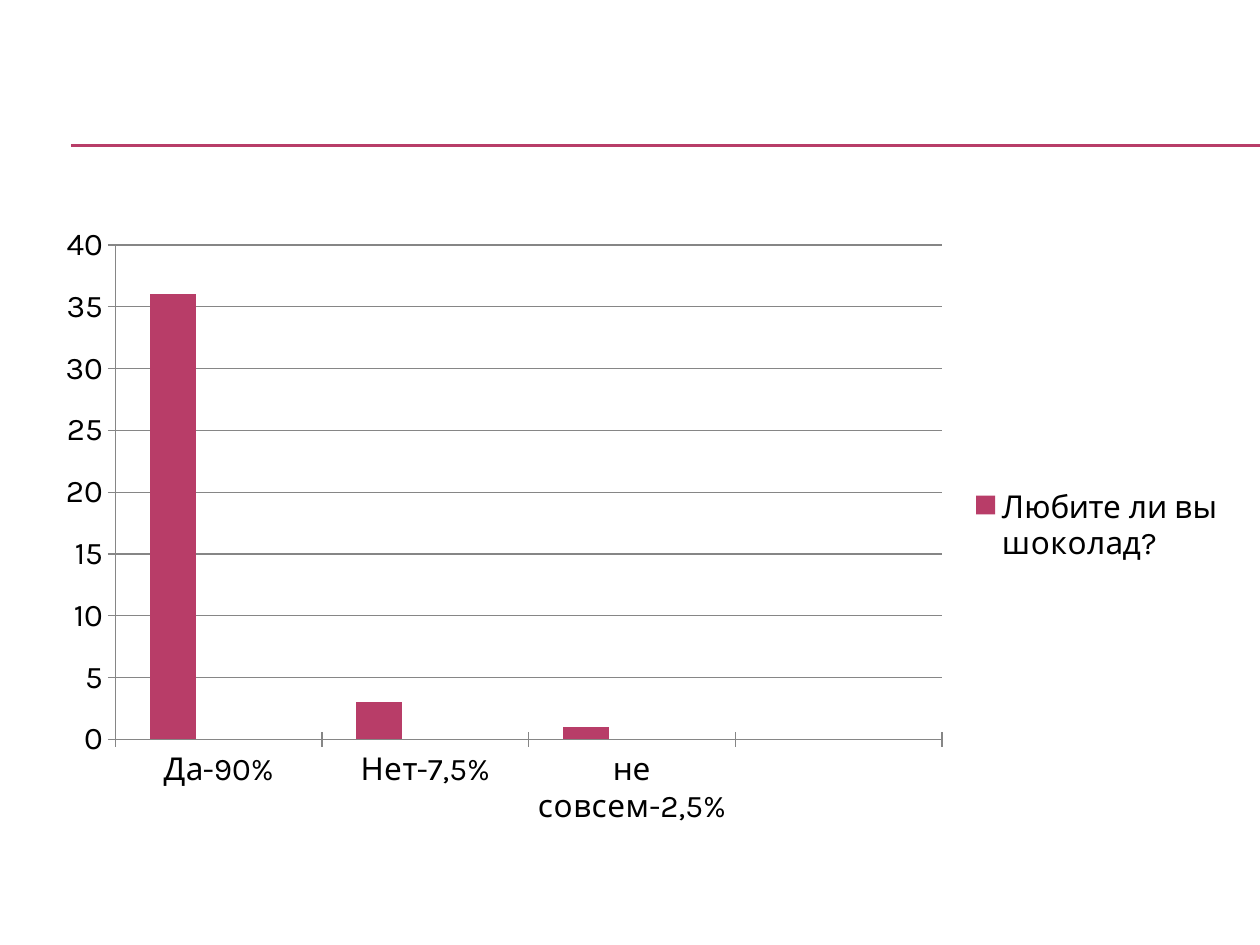
from lxml import etree
from pptx import Presentation
from pptx.chart.data import CategoryChartData
from pptx.dml.color import RGBColor
from pptx.enum.chart import XL_CHART_TYPE, XL_LEGEND_POSITION, XL_TICK_MARK
from pptx.enum.shapes import MSO_CONNECTOR
from pptx.oxml import parse_xml
from pptx.oxml.ns import nsdecls, qn
from pptx.util import Pt

COLUMNS = XL_CHART_TYPE.COLUMN_CLUSTERED
RIGHT = XL_LEGEND_POSITION.RIGHT
CROSS = XL_TICK_MARK.CROSS
STRAIGHT = MSO_CONNECTOR.STRAIGHT

THEME = {
    "font": "Karla",
    "size": Pt(18),
    "text": RGBColor.from_string("000000"),
    "rule": RGBColor.from_string("B83D68"),
    "grid": RGBColor.from_string("868686"),
    "thin": Pt(0.75),
}

SLIDE_WIDTH, SLIDE_HEIGHT = 720, 540
RULE_LEFT = 40.5
RULE_TOPS = (82.8, 83.5)
CHART_BOX = (23.8, 122.4, 684, 356.4)

ANSWERS = ("Да-90%", "Нет-7,5%", "не совсем-2,5%", "")
EMPTY = (None,) * len(ANSWERS)
QUESTIONS = (
    ("Любите ли вы шоколад?", (36, 3, 1, None), "B83D68"),
    ("Series 2", EMPTY, "AC66BB"),
    ("Series 3", EMPTY, "DE6C36"),
)
HIDDEN_ENTRIES = (1, 2)


def add_rule(slide, top):
    rule = slide.shapes.add_connector(
        STRAIGHT, Pt(RULE_LEFT), Pt(top), Pt(SLIDE_WIDTH), Pt(top)
    )
    style_line(rule.line, THEME["rule"])
    etree.SubElement(rule.element.spPr, qn("a:effectLst"))


def style_line(line, color):
    line.color.rgb = color
    line.width = THEME["thin"]


def add_survey_chart(slide):
    survey = CategoryChartData()
    survey.categories = ANSWERS
    for question, counts, _ in QUESTIONS:
        survey.add_series(question, counts)
    chart = slide.shapes.add_chart(COLUMNS, *map(Pt, CHART_BOX), survey).chart
    chart.has_title = False
    chart.font.name = THEME["font"]
    chart.font.size = THEME["size"]
    chart.font.color.rgb = THEME["text"]

    plot = chart.plots[0]
    plot.gap_width = 150
    plot.overlap = 0
    plot.vary_by_categories = False
    for series, (_, _, color) in zip(plot.series, QUESTIONS):
        series.format.fill.solid()
        series.format.fill.fore_color.rgb = RGBColor.from_string(color)

    for axis in (chart.category_axis, chart.value_axis):
        axis.major_tick_mark = CROSS
        style_line(axis.format.line, THEME["grid"])
    counts_axis = chart.value_axis
    counts_axis.minimum_scale, counts_axis.maximum_scale = 0, 40
    counts_axis.major_unit = 5
    counts_axis.has_major_gridlines = True
    style_line(counts_axis.major_gridlines.format.line, THEME["grid"])
    add_legend(chart)


def add_legend(chart):
    chart.has_legend = True
    chart.legend.position = RIGHT
    chart.legend.include_in_layout = False
    position = chart.element.find(".//" + qn("c:legendPos"))
    for index in reversed(HIDDEN_ENTRIES):
        position.addnext(parse_xml(
            f'<c:legendEntry {nsdecls("c")}><c:idx val="{index}"/>'
            '<c:delete val="1"/></c:legendEntry>'
        ))


def main():
    """Build the chocolate survey slide."""
    deck = Presentation()
    deck.slide_width, deck.slide_height = Pt(SLIDE_WIDTH), Pt(SLIDE_HEIGHT)
    slide = deck.slides.add_slide(deck.slide_layouts[6])
    for top in RULE_TOPS:
        add_rule(slide, top)
    add_survey_chart(slide)
    deck.save("out.pptx")


if __name__ == "__main__":
    main()
